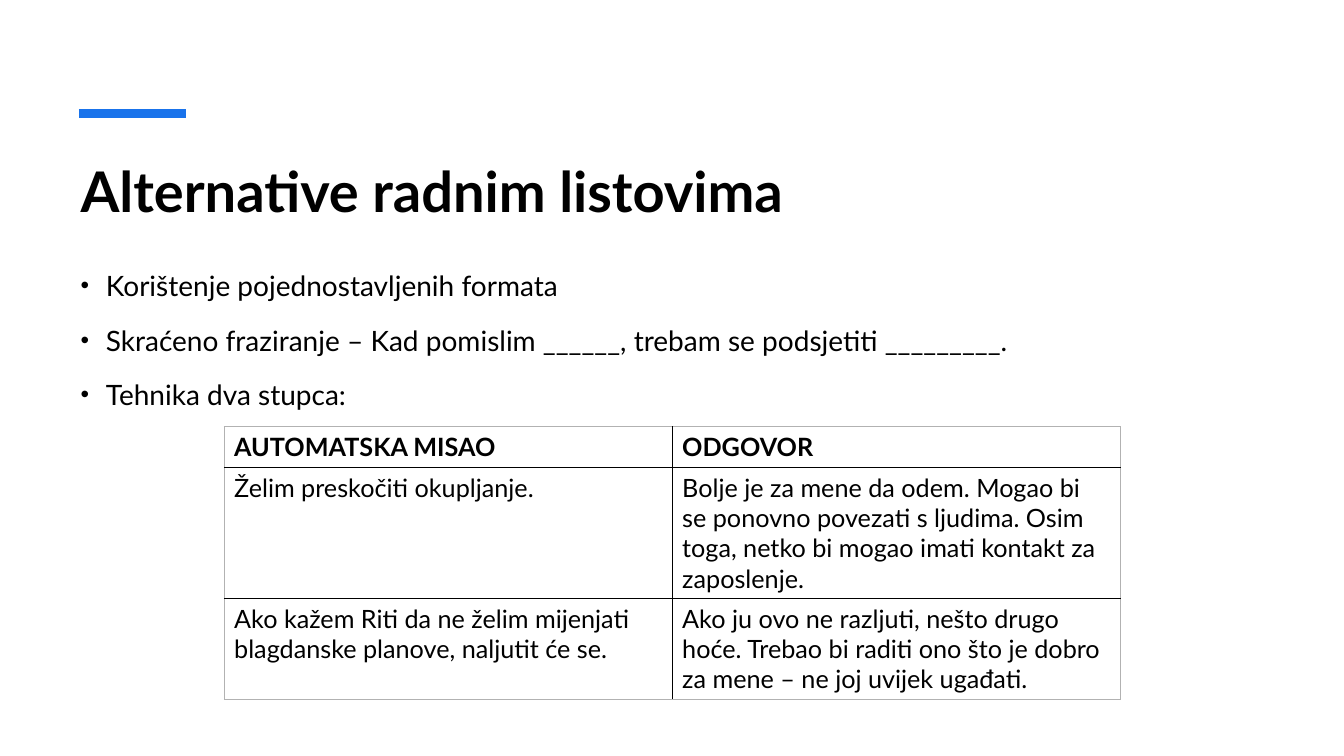
"""Build the slide on alternatives to worksheets."""
from lxml.etree import SubElement
from pptx import Presentation
from pptx.dml.color import RGBColor
from pptx.enum.shapes import MSO_CONNECTOR
from pptx.enum.text import MSO_ANCHOR, MSO_AUTO_SIZE, PP_ALIGN
from pptx.oxml import parse_xml
from pptx.oxml.ns import nsdecls, qn
from pptx.util import Inches, Pt

WIDTH, HEIGHT = Inches(13.33), Inches(7.5)
COLS, ROWS = 40, 30
BLACK, BLUE, GRAY = "000000", "1973EB", "B2B2B2"

BULLETS = [
    "Korištenje pojednostavljenih formata",
    "Skraćeno fraziranje – Kad pomislim ______, trebam se podsjetiti _________.",
    "Tehnika dva stupca:",
]
THOUGHTS = [
    ("AUTOMATSKA MISAO", "ODGOVOR"),
    ("Želim preskočiti okupljanje.",
     "Bolje je za mene da odem. Mogao bi se ponovno povezati s ljudima. "
     "Osim toga, netko bi mogao imati kontakt za zaposlenje."),
    ("Ako kažem Riti da ne želim mijenjati blagdanske planove, naljutit će se.",
     "Ako ju ovo ne razljuti, nešto drugo hoće. Trebao bi raditi ono što je "
     "dobro za mene – ne joj uvijek ugađati."),
]


def rgb(color):
    """Turn a hex string into a colour."""
    return RGBColor.from_string(color)


def write(p, text, size=18, bold=False, color=BLACK, font="Lato"):
    """Add a formatted run to a paragraph."""
    r = p.add_run()
    r.text = text
    r.font.name, r.font.size, r.font.bold = font, Pt(size), bold
    r.font.color.rgb = rgb(color)


class Deck:
    """Hold the style and the current slide, placed on a 40 by 30 grid."""

    def __init__(self):
        """Open a blank deck with one title and content slide."""
        self.prs = Presentation()
        self.prs.slide_width, self.prs.slide_height = WIDTH, HEIGHT
        self.s = self.prs.slides.add_slide(self.prs.slide_layouts[1])

    def x(self, cols):
        """Convert grid columns to a length."""
        return int(WIDTH * cols / COLS)

    def y(self, rows):
        """Convert grid rows to a length."""
        return int(HEIGHT * rows / ROWS)

    def frame(self, sp, left, top, width, height):
        """Place a placeholder and return its text frame."""
        sp.left, sp.top = self.x(left), self.y(top)
        sp.width, sp.height = self.x(width), self.y(height)
        tf = sp.text_frame
        tf.word_wrap, tf.auto_size = True, MSO_AUTO_SIZE.NONE
        tf.vertical_anchor = MSO_ANCHOR.TOP
        return tf

    def accent(self, left, right, top, color, weight):
        """Draw a level accent line."""
        line = self.s.shapes.add_connector(
            MSO_CONNECTOR.STRAIGHT, self.x(left), self.y(top), self.x(right), self.y(top))
        line.line.color.rgb, line.line.width = rgb(color), Pt(weight)
        SubElement(line._element.spPr, qn("a:effectLst"))

    def title(self, text, *box):
        """Fill the title placeholder."""
        p = self.frame(self.s.shapes.title, *box).paragraphs[0]
        p.alignment = PP_ALIGN.LEFT
        write(p, text, size=40, bold=True)

    def bullets(self, items, *box):
        """Fill the body placeholder with a bulleted list."""
        tf = self.frame(self.s.placeholders[1], *box)
        for i, item in enumerate(items):
            p = tf.add_paragraph() if i else tf.paragraphs[0]
            pPr = p._p.get_or_add_pPr()
            pPr.set("marL", str(Inches(0.25)))
            pPr.set("indent", str(-Inches(0.25)))
            SubElement(pPr, qn("a:buSzPct"), val="87000")
            SubElement(pPr, qn("a:buFont"), typeface="Arial")
            SubElement(pPr, qn("a:buChar"), char="•")
            p.line_spacing, p.space_before = 1.2, Pt(10 if i else 0)
            write(p, item, size=20)

    def table(self, data, left, top, width, heights):
        """Add an unfilled table with a bold first row."""
        n, m = len(data), len(data[0])
        table = self.s.shapes.add_table(
            n, m, self.x(left), self.y(top), self.x(width), self.y(sum(heights))).table
        table.first_row = table.horz_banding = False
        for i, texts in enumerate(data):
            table.rows[i].height = self.y(heights[i])
            for j, text in enumerate(texts):
                cell = table.cell(i, j)
                cell.fill.background()
                write(cell.text_frame.paragraphs[0], text, bold=i == 0)
                self.borders(cell, L=j == 0, R=j == m - 1, T=i == 0, B=i == n - 1)

    def borders(self, cell, **outer):
        """Draw black inner and thin gray outer cell borders."""
        tcPr = cell._tc.get_or_add_tcPr()
        for k, (side, edge) in enumerate(outer.items()):
            color, weight = (GRAY, 0.5) if edge else (BLACK, 1)
            tcPr.insert(k, parse_xml(
                f'<a:ln{side} {nsdecls("a")} w="{Pt(weight)}"><a:solidFill>'
                f'<a:srgbClr val="{color}"/></a:solidFill></a:ln{side}>'))


def main():
    """Build and save the slide."""
    deck = Deck()
    deck.accent(2.35, 5.55, 4.5, BLUE, 6)
    deck.title("Alternative radnim listovima", 2.1, 6, 35.75, 4.8)
    deck.bullets(BULLETS, 2.1, 10.2, 35.75, 15.6)
    deck.table(THOUGHTS, 6.67, 16.93, 26.67, (1.62, 5.2, 4))
    deck.prs.save("out.pptx")


if __name__ == "__main__":
    main()
